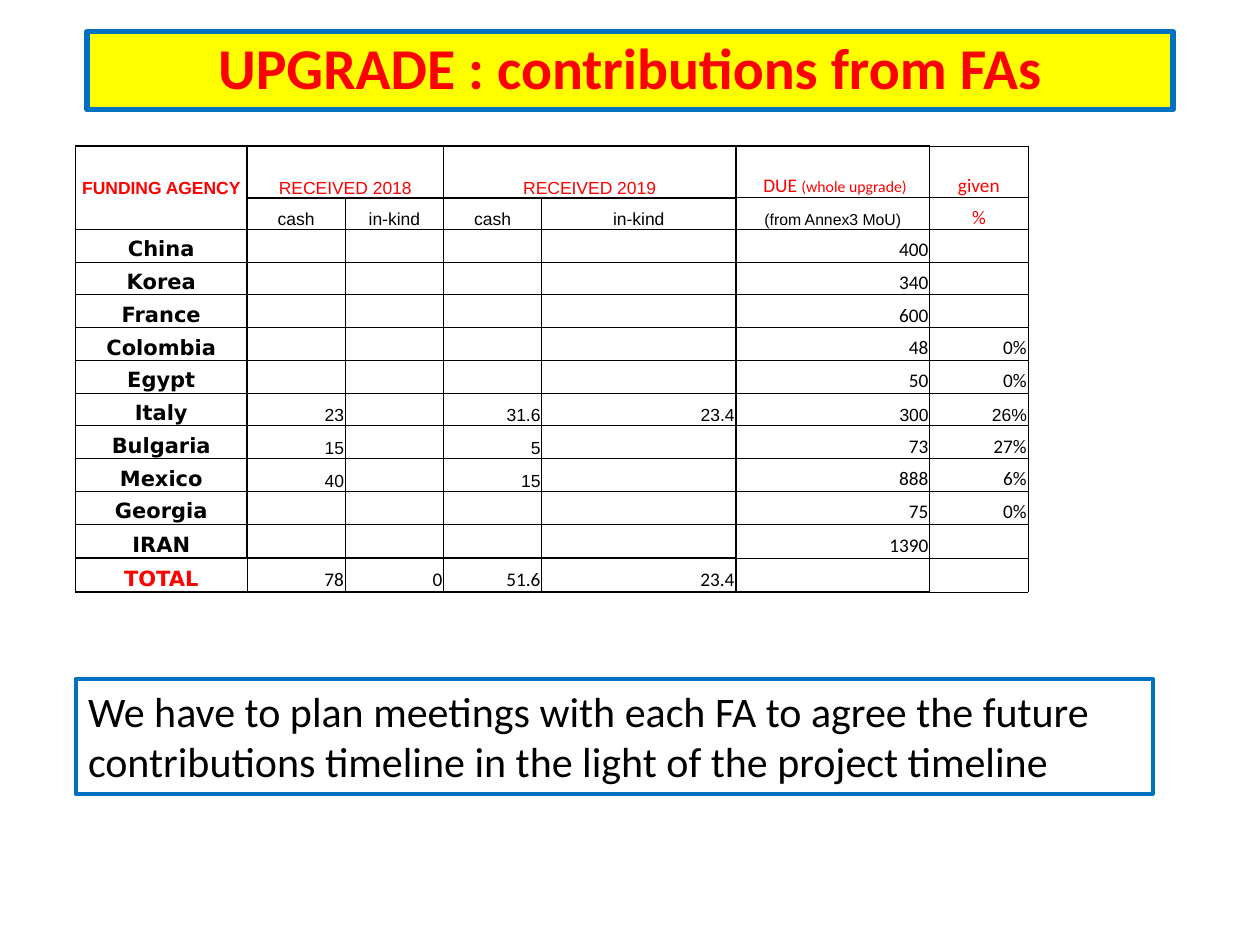
from lxml import etree
from pptx import Presentation
from pptx.dml.color import RGBColor
from pptx.enum.shapes import MSO_SHAPE
from pptx.enum.text import MSO_ANCHOR, PP_ALIGN
from pptx.oxml.ns import qn
from pptx.util import Inches, Pt

RECTANGLE = MSO_SHAPE.RECTANGLE
TOP, MIDDLE, BOTTOM = MSO_ANCHOR.TOP, MSO_ANCHOR.MIDDLE, MSO_ANCHOR.BOTTOM
LEFT, CENTER, RIGHT = PP_ALIGN.LEFT, PP_ALIGN.CENTER, PP_ALIGN.RIGHT

BLACK, WHITE, RED, BLUE, YELLOW = "000000", "FFFFFF", "FF0000", "0070C0", "FFFF00"
ARIAL, CALIBRI, DEJAVU = "Arial", "Calibri", "DejaVu Sans"

COLUMN_WIDTHS = [1.36, 0.78, 0.78, 0.78, 1.54, 1.54, 0.78]
ROW_HEIGHTS = [0.41, 0.25] + [0.26] * 9 + [0.27] * 2
TOTAL_ROW = len(ROW_HEIGHTS) - 1

# (row, column): runs of text, size, font, colour, bold
HEADERS = {
    (0, 0): [("FUNDING AGENCY", 10, ARIAL, RED, True)],
    (0, 1): [("RECEIVED 2018", 10, ARIAL, RED, False)],
    (0, 3): [("RECEIVED 2019", 10, ARIAL, RED, False)],
    (0, 5): [(" DUE ", 11, CALIBRI, RED, False),
             ("(whole upgrade)", 9, CALIBRI, RED, False)],
    (0, 6): [("given", 11, CALIBRI, RED, False)],
    (1, 1): [("cash", 10, ARIAL, BLACK, False)],
    (1, 2): [("in-kind", 10, ARIAL, BLACK, False)],
    (1, 3): [("cash", 10, ARIAL, BLACK, False)],
    (1, 4): [("in-kind", 10, ARIAL, BLACK, False)],
    (1, 5): [("(from Annex3 MoU)", 9, ARIAL, BLACK, False)],
    (1, 6): [("%", 11, CALIBRI, RED, False)],
}
HEADER_MERGES = [((0, 0), (1, 0)), ((0, 1), (0, 2)), ((0, 3), (0, 4))]

# agency, cash 2018, in-kind 2018, cash 2019, in-kind 2019, due, given
CONTRIBUTIONS = [
    ("China", "", "", "", "", "400", ""),
    ("Korea", "", "", "", "", "340", ""),
    ("France", "", "", "", "", "600", ""),
    ("Colombia", "", "", "", "", "48", "0%"),
    ("Egypt", "", "", "", "", "50", "0%"),
    ("Italy", "23", "", "31.6", "23.4", "300", "26%"),
    ("Bulgaria", "15", "", "5", "", "73", "27%"),
    ("Mexico", "40", "", "15", "", "888", "6%"),
    ("Georgia", "", "", "", "", "75", "0%"),
    ("IRAN", "", "", "", "", "1390", ""),
    ("TOTAL", "78", "0", "51.6", "23.4", "", ""),
]


def rgb(color):
    return RGBColor.from_string(color)


def add_run(paragraph, text, size, font, color, bold=False):
    run = paragraph.add_run()
    run.text = text
    run.font.size = Pt(size)
    run.font.name = font
    run.font.color.rgb = rgb(color)
    run.font.bold = bold


def add_framed_text(slide, box, fill, line_width, anchor, align, run):
    frame = slide.shapes.add_shape(RECTANGLE, *[Inches(v) for v in box])
    frame.shadow.inherit = False
    frame.fill.solid()
    frame.fill.fore_color.rgb = rgb(fill)
    frame.line.color.rgb = rgb(BLUE)
    frame.line.width = Pt(line_width)
    frame.text_frame.word_wrap = True
    frame.text_frame.vertical_anchor = anchor
    paragraph = frame.text_frame.paragraphs[0]
    paragraph.alignment = align
    add_run(paragraph, *run)
    return paragraph


def add_title(slide, box):
    title = add_framed_text(slide, box, YELLOW, 3, MIDDLE, CENTER,
                            ("UPGRADE : contributions from FAs", 33, CALIBRI, RED, True))
    title.line_spacing = 0.9


def add_conclusion(slide, box):
    add_framed_text(slide, box, WHITE, 2.25, TOP, LEFT,
                    ("We have to plan meetings with each FA to agree the future "
                     "contributions timeline in the light of the project timeline",
                     24, CALIBRI, BLACK))


def vertical_width(row, edge):
    thick = (edge in (0, 5) or (edge == 1 and row < TOTAL_ROW)
             or (edge == 3 and row < 2))
    return 1 if thick else 0.5


def horizontal_width(edge, column):
    thick = (column < 5 and edge in (0, 1, 2, TOTAL_ROW, TOTAL_ROW + 1)
             or column == 5 and edge in (0, 2, TOTAL_ROW + 1))
    return 1 if thick else 0.5


def set_borders(cell, row, column):
    right = column + (cell.span_width if cell.is_merge_origin else 1)
    bottom = row + (cell.span_height if cell.is_merge_origin else 1)
    widths = {
        "a:lnL": vertical_width(row, column),
        "a:lnR": vertical_width(row, right),
        "a:lnT": horizontal_width(row, column),
        "a:lnB": horizontal_width(bottom, column),
    }
    properties = cell._tc.get_or_add_tcPr()
    for position, (tag, width) in enumerate(widths.items()):
        border = etree.Element(qn(tag), w=str(int(Pt(width))))
        fill = etree.SubElement(border, qn("a:solidFill"))
        etree.SubElement(fill, qn("a:srgbClr"), val=BLACK)
        properties.insert(position, border)


def contribution_run(row, column, text):
    if column == 0:
        return text, 12, DEJAVU, RED if row == TOTAL_ROW else BLACK, True
    # Received amounts and the whole Italy row are in Arial
    agency = CONTRIBUTIONS[row - 2][0]
    if row < TOTAL_ROW and (column < 5 or agency == "Italy"):
        return text, 10, ARIAL, BLACK
    return text, 11, CALIBRI, BLACK


def fill_cell(cell, row, column):
    cell.margin_left = cell.margin_top = cell.margin_right = Inches(0.01)
    cell.margin_bottom = 0
    cell.vertical_anchor = MIDDLE if (row, column) == (0, 0) else BOTTOM
    cell.fill.solid()
    cell.fill.fore_color.rgb = rgb(WHITE)
    paragraph = cell.text_frame.paragraphs[0]
    paragraph.alignment = CENTER if row < 2 or column == 0 else RIGHT
    if row < 2:
        runs = HEADERS.get((row, column), [])
    else:
        text = CONTRIBUTIONS[row - 2][column]
        runs = [contribution_run(row, column, text)] if text else []
    for run in runs:
        add_run(paragraph, *run)
    if not runs:
        # Keeps empty cells from stretching their row
        etree.SubElement(paragraph._p, qn("a:endParaRPr"), sz="1000")


def add_contributions_table(slide, box):
    table = slide.shapes.add_table(len(ROW_HEIGHTS), len(COLUMN_WIDTHS),
                                   *[Inches(v) for v in box]).table
    table.first_row = table.horz_banding = False
    for column, width in zip(table.columns, COLUMN_WIDTHS):
        column.width = Inches(width)
    for row, height in zip(table.rows, ROW_HEIGHTS):
        row.height = Inches(height)
    for first, last in HEADER_MERGES:
        table.cell(*first).merge(table.cell(*last))
    for row in range(len(ROW_HEIGHTS)):
        for column in range(len(COLUMN_WIDTHS)):
            cell = table.cell(row, column)
            fill_cell(cell, row, column)
            if not cell.is_spanned:
                set_borders(cell, row, column)


def main():
    presentation = Presentation()
    presentation.slide_width, presentation.slide_height = Inches(10), Inches(7.5)
    slide = presentation.slides.add_slide(presentation.slide_layouts[6])
    add_title(slide, (0.69, 0.25, 8.62, 0.62))
    add_conclusion(slide, (0.6, 5.39, 8.55, 0.91))
    add_contributions_table(slide, (0.6, 1.16, sum(COLUMN_WIDTHS), sum(ROW_HEIGHTS)))
    presentation.save("out.pptx")


if __name__ == "__main__":
    main()
